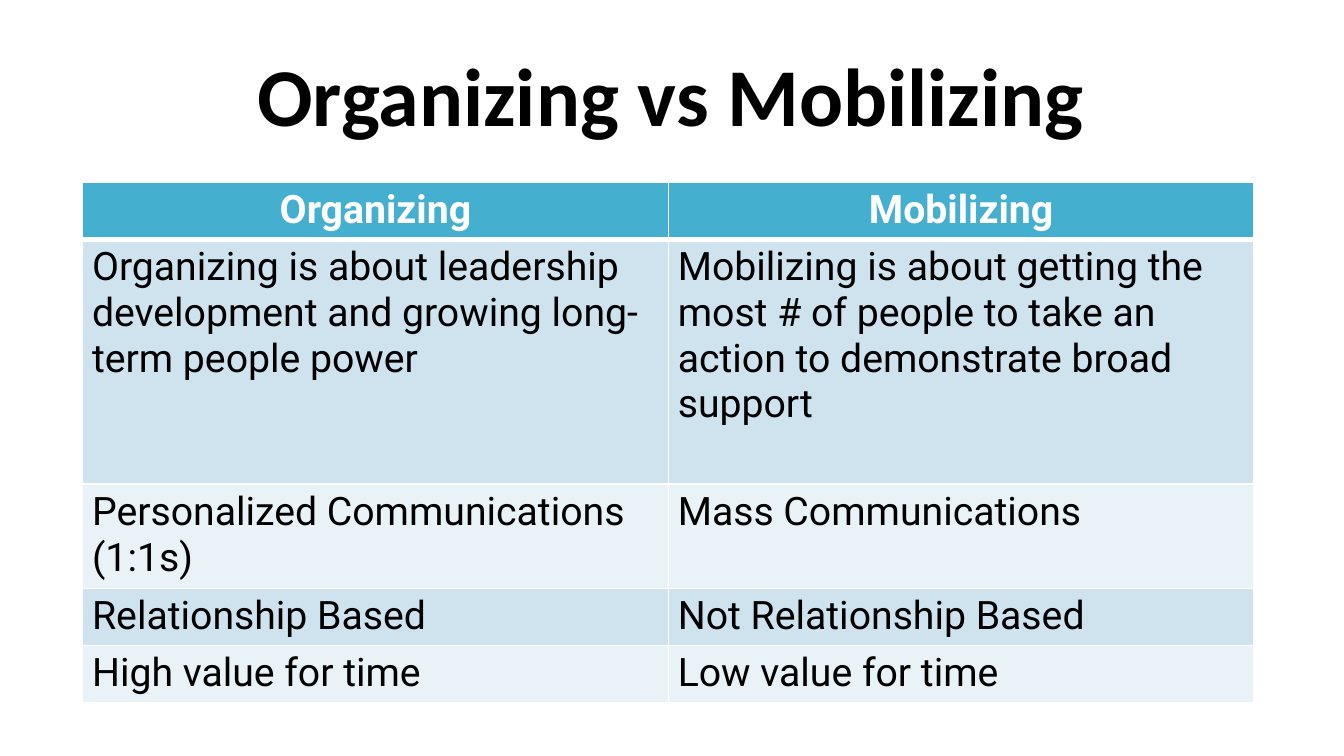
from dataclasses import dataclass

import lxml.etree
import pptx
import pptx.dml.color
import pptx.enum.text
import pptx.oxml.ns
import pptx.slide
import pptx.table
import pptx.util
from pptx.util import Cm, Pt

COLORS = {
    "black": "000000",
    "white": "FFFFFF",
    "header": "45AFD0",
    "dark_band": "CFE3EE",
    "light_band": "E9F2F7",
}
CENTER = pptx.enum.text.PP_ALIGN.CENTER
LEFT = pptx.enum.text.PP_ALIGN.LEFT
MIDDLE = pptx.enum.text.MSO_ANCHOR.MIDDLE


@dataclass
class ComparisonRow:
    organizing: str
    mobilizing: str
    height: float


ROWS = [
    ComparisonRow("Organizing", "Mobilizing", 1.07),
    ComparisonRow(
        "Organizing is about leadership development and growing long-term people power",
        "Mobilizing is about getting the most # of people to take an action "
        "to demonstrate broad support",
        4.63,
    ),
    ComparisonRow("Personalized Communications (1:1s)", "Mass Communications", 1.97),
    ComparisonRow("Relationship Based", "Not Relationship Based", 1.08),
    ComparisonRow("High value for time", "Low value for time", 1.08),
]


def rgb(name: str) -> pptx.dml.color.RGBColor:
    return pptx.dml.color.RGBColor.from_string(COLORS[name])


def format_paragraph(paragraph, font: str, size: int, color: str, bold: bool, alignment) -> None:
    paragraph.alignment = alignment
    paragraph.font.name = font
    paragraph.font.size = Pt(size)
    paragraph.font.bold = bold
    paragraph.font.color.rgb = rgb(color)


def add_borders(cell: pptx.table._Cell, bottom_width: int, top_width: int) -> None:
    properties = cell._tc.get_or_add_tcPr()
    qualified = pptx.oxml.ns.qn
    widths = {"lnL": 1, "lnR": 1, "lnT": top_width, "lnB": bottom_width}
    for side, width in widths.items():
        line = lxml.etree.SubElement(properties, qualified(f"a:{side}"), w=str(Pt(width)))
        fill = lxml.etree.SubElement(line, qualified("a:solidFill"))
        lxml.etree.SubElement(fill, qualified("a:srgbClr"), val=COLORS["white"])


def fill_cell(cell: pptx.table._Cell, text: str, row_index: int) -> None:
    is_header = row_index == 0
    add_borders(cell, 3 if is_header else 1, 3 if row_index == 1 else 1)
    cell.fill.solid()
    band = "dark_band" if row_index % 2 else "light_band"
    cell.fill.fore_color.rgb = rgb("header" if is_header else band)
    cell.margin_left = cell.margin_right = Cm(0.18)
    cell.margin_top = cell.margin_bottom = Cm(0.09)
    cell.text = text
    paragraph = cell.text_frame.paragraphs[0]
    color = "white" if is_header else "black"
    format_paragraph(paragraph, "Roboto", 21, color, is_header, CENTER if is_header else LEFT)
    if not is_header:
        paragraph.space_after = Pt(6)


def add_title(slide: pptx.slide.Slide, text: str) -> None:
    title = slide.shapes.title
    title.left, title.top, title.width, title.height = Cm(4.11), Cm(0.58), Cm(17.15), Cm(2.39)
    title.text_frame.text = text
    title.text_frame.vertical_anchor = MIDDLE
    format_paragraph(title.text_frame.paragraphs[0], "Calibri", 44, "black", True, CENTER)


def add_comparison(slide: pptx.slide.Slide, rows: list[ComparisonRow]) -> None:
    height = Cm(sum(row.height for row in rows))
    frame = slide.shapes.add_table(len(rows), 2, Cm(1.56), Cm(3.45), Cm(22.14), height)
    for row_index, row in enumerate(rows):
        frame.table.rows[row_index].height = Cm(row.height)
        for column_index, text in enumerate((row.organizing, row.mobilizing)):
            fill_cell(frame.table.cell(row_index, column_index), text, row_index)


def main() -> None:
    presentation = pptx.Presentation()
    presentation.slide_width = Cm(25.4)
    presentation.slide_height = Cm(14.29)
    slide = presentation.slides.add_slide(presentation.slide_layouts[5])
    add_title(slide, "Organizing vs Mobilizing")
    add_comparison(slide, ROWS)
    presentation.save("out.pptx")


if __name__ == "__main__":
    main()
